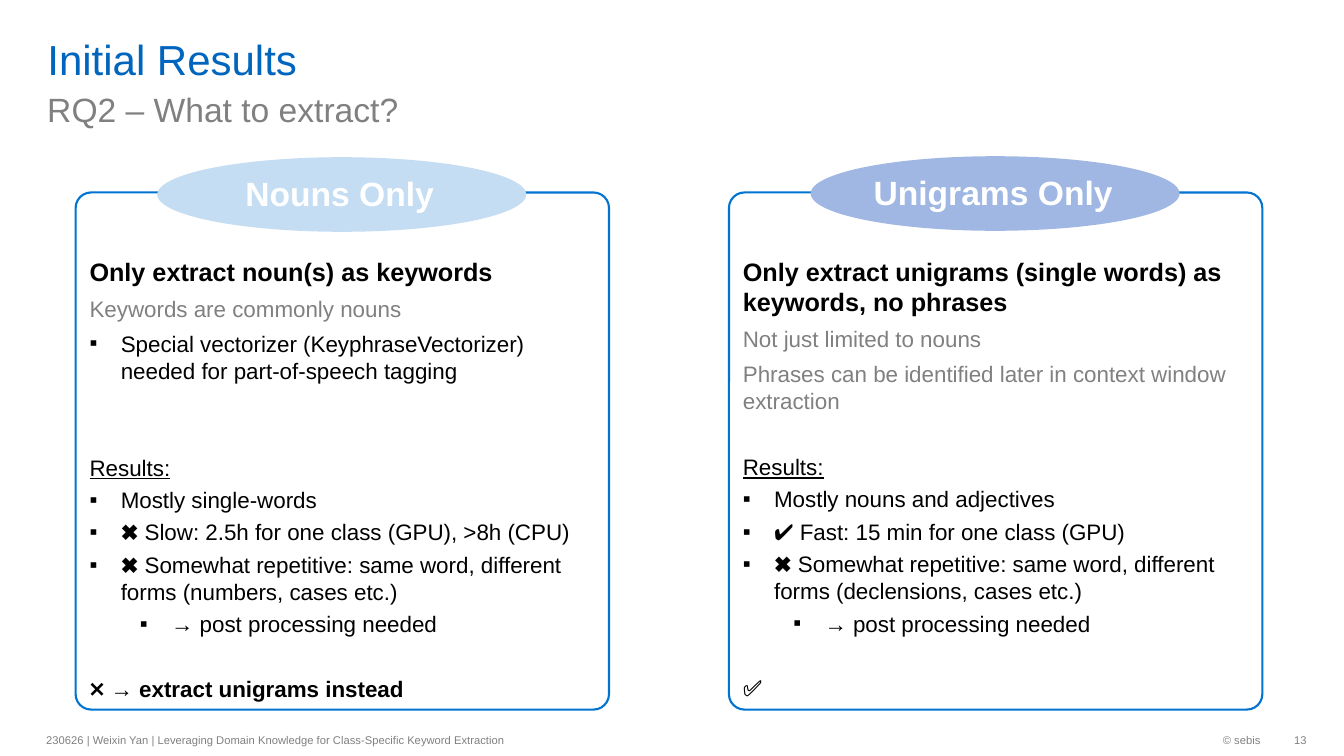
from lxml.etree import SubElement
from pptx import Presentation
from pptx.dml.color import RGBColor
from pptx.enum.shapes import MSO_SHAPE as Shape
from pptx.enum.text import MSO_ANCHOR as Anchor, PP_ALIGN as Align
from pptx.oxml.ns import qn
from pptx.util import Pt

PX = 9144
FONT = "Arial"
BLUE, BORDER, GREY, BLACK, WHITE = "0065BD", "0173D0", "808080", "000000", "FFFFFF"

HEAD = dict(size=18, bold=True, after=6)
NOTE = dict(color=GREY, after=6)
BULLET = dict(indent=31)
SUB_BULLET = dict(indent=81, level=1)

CARDS = [
    ("Nouns Only", "C4DDF3", 75, 156, [
        ("Only extract noun(s) as keywords", HEAD),
        ("Keywords are commonly nouns", NOTE),
        ("Special vectorizer (KeyphraseVectorizer) needed for part-of-speech tagging", BULLET),
        ("Results:", dict(underline=True, before=46)),
        ("Mostly single-words", BULLET),
        ("✖️ Slow: 2.5h for one class (GPU), >8h (CPU)", BULLET),
        ("✖️ Somewhat repetitive: same word, different forms (numbers, cases etc.)", BULLET),
        ("→ post processing needed", SUB_BULLET),
        ("❌ → extract unigrams instead", dict(bold=True, before=23)),
    ]),
    ("Unigrams Only", "A0B7E3", 723, 155, [
        ("Only extract unigrams (single words) as keywords, no phrases", HEAD),
        ("Not just limited to nouns", NOTE),
        ("Phrases can be identified later in context window extraction", NOTE),
        ("Results:", dict(underline=True, before=22)),
        ("Mostly nouns and adjectives", BULLET),
        ("✔︎ Fast: 15 min for one class (GPU)", BULLET),
        ("✖️ Somewhat repetitive: same word, different forms (declensions, cases etc.)", BULLET),
        ("→ post processing needed", SUB_BULLET),
        ("✅", dict(before=23)),
    ]),
]


def rgb(value):
    return RGBColor.from_string(value)


class SlideBuilder:
    def __init__(self, slide):
        self.slide = slide

    def frame(self, shape, anchor, margins):
        frame = shape.text_frame
        frame.word_wrap = True
        frame.vertical_anchor = anchor
        (frame.margin_left, frame.margin_top,
         frame.margin_right, frame.margin_bottom) = [side * PX for side in margins]
        return frame

    def style(self, para, text, size=16, color=BLACK, bold=False, underline=False,
              align=Align.LEFT, before=0, after=0, indent=0, level=0):
        para.text = text
        para.alignment = align
        para.level = level
        para.line_spacing = 1.0
        para.space_before, para.space_after = Pt(before), Pt(after)
        if indent:
            props = para._p.get_or_add_pPr()
            props.set("marL", str(indent * PX))
            props.set("indent", str(-31 * PX))
            SubElement(props, qn("a:buFont")).set("typeface", FONT)
            SubElement(props, qn("a:buChar")).set("char", "▪")
        font = para.font
        font.name, font.size, font.color.rgb = FONT, Pt(size), rgb(color)
        font.bold, font.underline = bold, underline

    def title(self, text, left, top, width, height, **look):
        title = self.slide.shapes.title
        title.left, title.top = left * PX, top * PX
        title.width, title.height = width * PX, height * PX
        frame = self.frame(title, Anchor.BOTTOM, (10, 0, 10, 0))
        self.style(frame.paragraphs[0], text, **look)

    def text(self, lines, left, top, width, height, anchor=Anchor.TOP,
             margins=(10, 5, 10, 5), **shared):
        box = self.slide.shapes.add_textbox(left * PX, top * PX, width * PX, height * PX)
        frame = self.frame(box, anchor, margins)
        for index, (line, look) in enumerate(lines):
            para = frame.add_paragraph() if index else frame.paragraphs[0]
            self.style(para, line, **{**shared, **look})

    def shape(self, kind, left, top, width, height, fill=None, line=None):
        shape = self.slide.shapes.add_shape(
            kind, left * PX, top * PX, width * PX, height * PX)
        shape.shadow.inherit = False
        if fill:
            shape.fill.solid()
            shape.fill.fore_color.rgb = rgb(fill)
        else:
            shape.fill.background()
        if line:
            shape.line.color.rgb = rgb(line)
            shape.line.width = Pt(1.5)
        else:
            shape.line.fill.background()
        return shape

    def card(self, heading, fill, left, badge_top, lines):
        border = self.shape(Shape.ROUNDED_RECTANGLE, left, 191, 529, 513, line=BORDER)
        border.adjustments[0] = 0.03
        self.text(lines, left + 4, 249, 520, 458, after=4)
        badge = self.shape(Shape.OVAL, left + 81, badge_top, 366, 74, fill=fill)
        frame = self.frame(badge, Anchor.MIDDLE, (0, 0, 4, 2))
        self.style(frame.paragraphs[0], heading, size=24, color=WHITE, bold=True,
                   align=Align.CENTER)


def main():
    deck = Presentation()
    deck.slide_width, deck.slide_height = 1333 * PX, 750 * PX
    page = SlideBuilder(deck.slides.add_slide(deck.slide_layouts[5]))

    page.title("Initial Results", 37, 4, 1158, 79, size=30, color=BLUE)
    page.text([("RQ2 – What to extract?", {})], 37, 83, 1158, 45, anchor=Anchor.BOTTOM,
              margins=(10, 0, 10, 0), size=24, color=GREY)
    for card in CARDS:
        page.card(*card)

    footer = dict(anchor=Anchor.MIDDLE, size=8, color=GREY)
    page.text([("230626 | Weixin Yan | Leveraging Domain Knowledge for "
                "Class-Specific Keyword Extraction", {})], 36, 718, 630, 32, **footer)
    page.text([("© sebis", {})], 1026, 718, 234, 32, align=Align.RIGHT, **footer)
    page.text([("13", {})], 1260, 718, 36, 32, margins=(10, 5, 0, 5),
              align=Align.RIGHT, **footer)
    deck.save("out.pptx")


if __name__ == "__main__":
    main()
